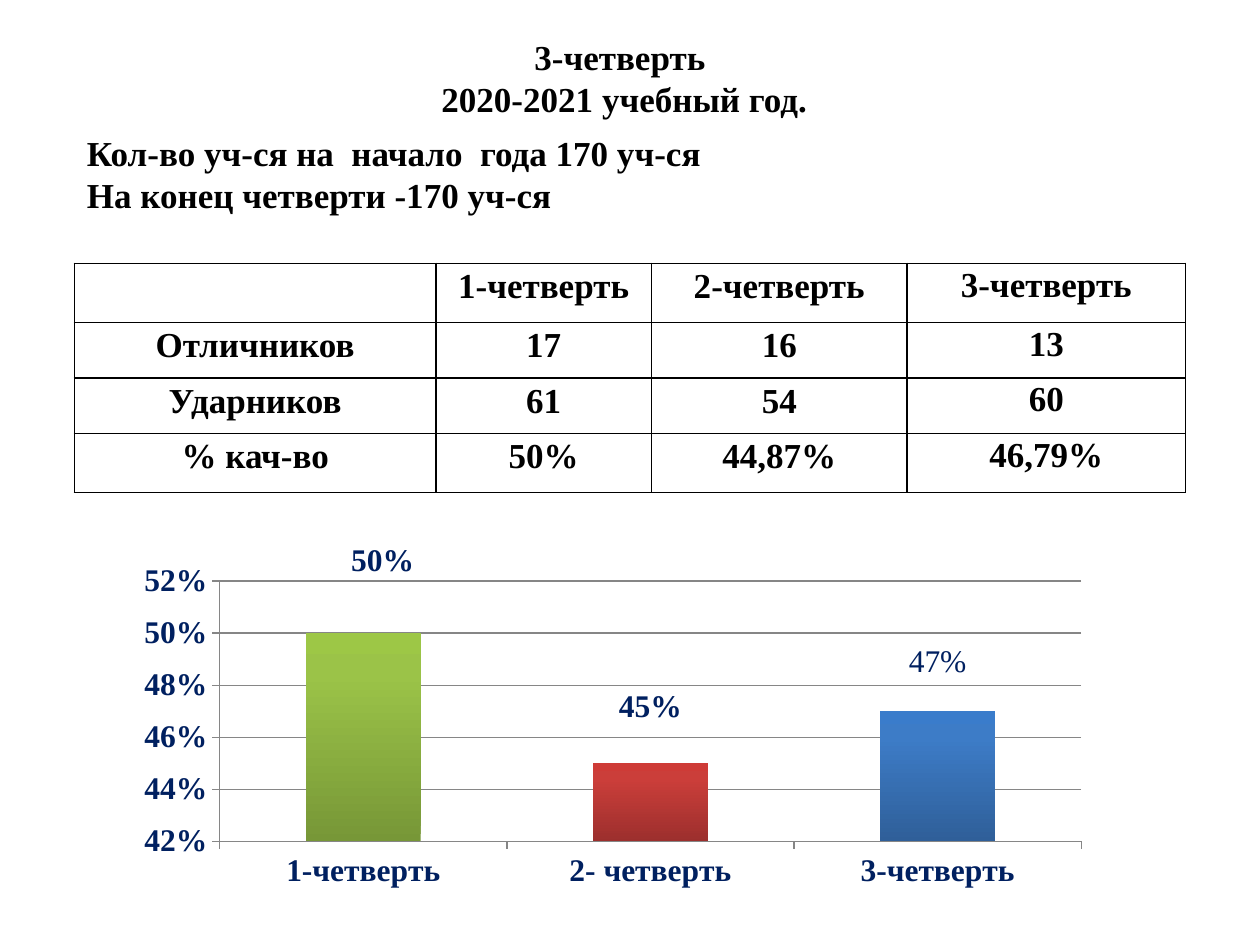
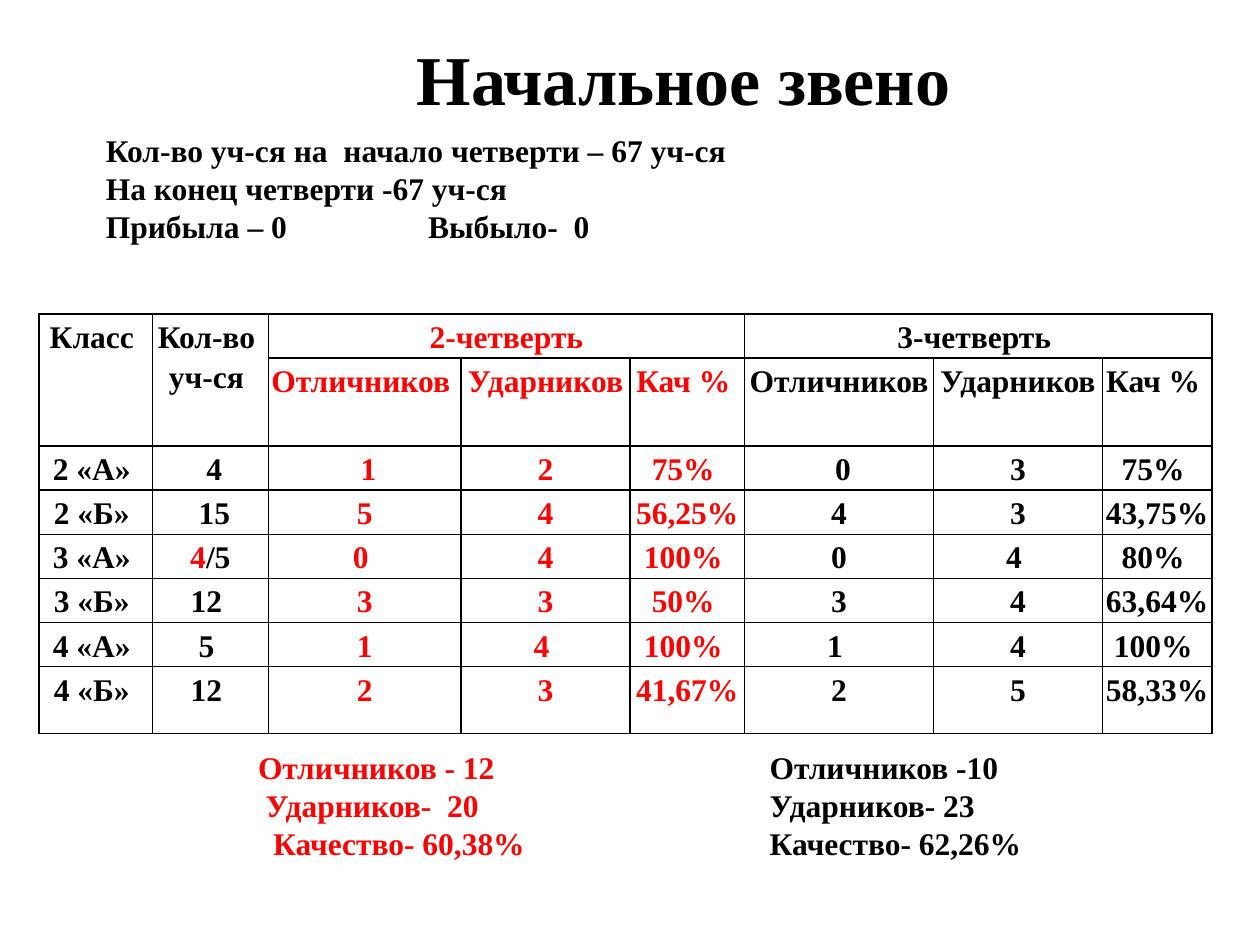
import copy
from dataclasses import dataclass
from typing import NamedTuple

import pptx
import pptx.chart.data
import pptx.dml.color
import pptx.enum.chart
import pptx.enum.text
import pptx.oxml
import pptx.oxml.ns
import pptx.util

Inches = pptx.util.Inches
Pt = pptx.util.Pt
qn = pptx.oxml.ns.qn
Align = pptx.enum.text.PP_ALIGN

FONT = "Times New Roman"
COLORS = {
    "ink": "000000",
    "previous": "FF0000",
    "chart_text": "002060",
    "axis": "868686",
}
NO_LEADER_LINES = (
    '<c:extLst xmlns:c="http://schemas.openxmlformats.org/drawingml/2006/chart">'
    '<c:ext uri="{CE6537A1-D6FC-4f65-9D91-7224C49458BB}"'
    ' xmlns:c15="http://schemas.microsoft.com/office/drawing/2012/chart">'
    '<c15:showLeaderLines val="0"/></c:ext></c:extLst>'
)


class Span(NamedTuple):
    text: str
    color: str = "ink"


class Box(NamedTuple):
    left: float
    top: float
    width: float
    height: float


class QuarterBar(NamedTuple):
    quarter: str
    share: float
    gradient: tuple[str, str, str]
    label_shift: tuple[float, float]


@dataclass
class TextBlock:
    box: Box
    size: int
    lines: list[list[Span]]
    align: Align = Align.LEFT
    indent_step: float = 0


@dataclass
class Grid:
    left: float
    top: float
    columns: list[float]
    rows: list[float]
    size: int
    line_spacing: float
    space_after: int
    side_margin: float


BARS = [
    QuarterBar("1-четверть", 0.50, ("779737", "9BC348", "9DC746"), (0.02, -0.13)),
    QuarterBar("2- четверть", 0.45, ("9C2F2D", "CB3E3A", "CE3B37"), (0, -0.09)),
    QuarterBar("3-четверть", 0.47, ("2F5F99", "3D7CC7", "3A7CCB"), (0, -0.07)),
]

QUARTER_ROWS = [
    ["", "1-четверть", "2-четверть", "3-четверть"],
    ["Отличников", "17", "16", "13"],
    ["Ударников", "61", "54", "60"],
    ["% кач-во", "50%", "44,87%", "46,79%"],
]

MEASURES = ["Отличников ", "Ударников", "Кач % "]
CLASS_ROWS = [
    ["Класс ", "Кол-во \nуч-ся ", "2-четверть", "", "", "3-четверть ", "", ""],
    ["", "", *MEASURES, *MEASURES],
    ["2 «А» ", " 4", " 1", "2", "75% ", " 0", "3", "75% "],
    ["2 «Б» ", " 15", "5", "4", "56,25% ", "4", "3", "43,75% "],
    ["3 «А» ", "4/5", "0 ", "4", "100% ", "0", "4 ", "80% "],
    ["3 «Б» ", "12 ", "3", "3", "50% ", "3", "4", "63,64% "],
    ["4 «А» ", "5 ", "1", "4 ", "100% ", "1 ", "4", "100% "],
    ["4 «Б» ", "12 ", "2", "3", "41,67% ", "2", "5", "58,33% "],
]
PREVIOUS_COLUMNS = range(2, 5)


def rgb(hex_color: str) -> pptx.dml.color.RGBColor:
    return pptx.dml.color.RGBColor.from_string(hex_color)


def style_font(font, size: int, color: str, bold: bool = True) -> None:
    font.name = FONT
    font.size = Pt(size)
    font.bold = bold
    font.color.rgb = rgb(COLORS[color])


def write_spans(paragraph, spans: list[Span], size: int, align: Align) -> None:
    paragraph.alignment = align
    paragraph.space_before = Pt(0)
    for span in spans:
        run = paragraph.add_run()
        run.text = span.text
        style_font(run.font, size, span.color)


def fill_text(shape, block: TextBlock) -> None:
    shape.left, shape.top, shape.width, shape.height = map(Inches, block.box)
    frame = shape.text_frame
    frame.word_wrap = True
    frame.auto_size = pptx.enum.text.MSO_AUTO_SIZE.NONE
    frame.vertical_anchor = pptx.enum.text.MSO_ANCHOR.TOP
    for index, spans in enumerate(block.lines):
        paragraph = frame.add_paragraph() if index else frame.paragraphs[0]
        write_spans(paragraph, spans, block.size, block.align)
        properties = paragraph._p.get_or_add_pPr()
        properties.set("marL", str(int(Inches(index * block.indent_step))))
        properties.set("indent", "0")
        properties.append(properties.makeelement(qn("a:buNone"), {}))


def add_text(slide, block: TextBlock) -> None:
    fill_text(slide.shapes.add_textbox(0, 0, 0, 0), block)


def add_report_slide(deck, title: TextBlock, counts: TextBlock):
    slide = deck.slides.add_slide(deck.slide_layouts[1])
    fill_text(slide.shapes.title, title)
    fill_text(slide.placeholders[1], counts)
    return slide


def outline_cell(cell) -> None:
    properties = cell._tc.get_or_add_tcPr()
    for position, side in enumerate(("a:lnL", "a:lnR", "a:lnT", "a:lnB")):
        line = properties.makeelement(qn(side), {"w": str(int(Pt(1)))})
        fill = line.makeelement(qn("a:solidFill"), {})
        fill.append(fill.makeelement(qn("a:srgbClr"), {"val": COLORS["ink"]}))
        line.append(fill)
        properties.insert(position, line)


def add_grid(slide, grid: Grid):
    table = slide.shapes.add_table(
        len(grid.rows), len(grid.columns), Inches(grid.left), Inches(grid.top),
        Inches(sum(grid.columns)), Inches(sum(grid.rows))).table
    table.first_row = table.horz_banding = False
    for column, width in zip(table.columns, grid.columns):
        column.width = Inches(width)
    for row, height in zip(table.rows, grid.rows):
        row.height = Inches(height)
    for cell in table.iter_cells():
        cell.margin_left = cell.margin_right = Inches(grid.side_margin)
        cell.margin_top, cell.margin_bottom = Inches(0.01), 0
        cell.fill.background()
        outline_cell(cell)
    return table


def fill_cell(cell, lines: list[list[Span]], grid: Grid) -> None:
    for index, spans in enumerate(lines):
        paragraph = cell.text_frame.add_paragraph() if index else cell.text_frame.paragraphs[0]
        write_spans(paragraph, spans, grid.size, Align.CENTER)
        paragraph.line_spacing = grid.line_spacing
        paragraph.space_after = Pt(grid.space_after)


def manual_layout(parent, settings: dict[str, str]):
    layout = parent.makeelement(qn("c:layout"), {})
    manual = layout.makeelement(qn("c:manualLayout"), {})
    for name, value in settings.items():
        manual.append(manual.makeelement(qn(f"c:{name}"), {"val": value}))
    layout.append(manual)
    return layout


def paint_bar(point, gradient: tuple[str, str, str]) -> None:
    fill = point.format.fill
    fill.gradient()
    fill.gradient_angle = 90
    first_stop = fill.gradient_stops[0]._gs
    first_stop.addnext(copy.deepcopy(first_stop))
    for stop, position, color in zip(fill.gradient_stops, (0, 0.8, 1), gradient):
        stop.position = position
        stop.color.rgb = rgb(color)


def style_axis(axis) -> None:
    style_font(axis.tick_labels.font, 18, "chart_text")
    axis.format.line.color.rgb = rgb(COLORS["axis"])
    axis.major_tick_mark = pptx.enum.chart.XL_TICK_MARK.OUTSIDE


def label_bars(series) -> None:
    labels = series.data_labels
    labels.show_value = True
    labels.number_format = "0%"
    labels.number_format_is_linked = False
    style_font(labels.font, 18, "chart_text")
    for index, bar in enumerate(BARS):
        point = series.points[index]
        paint_bar(point, bar.gradient)
        if index < len(BARS) - 1:
            style_font(point.data_label.font, 18, "chart_text")
        else:
            caption = point.data_label.text_frame
            caption.text = f"{bar.share:.0%}"
            style_font(caption.paragraphs[0].runs[0].font, 18, "chart_text", bold=False)
    for label, bar in zip(series._element.iter(qn("c:dLbl")), BARS):
        shift_x, shift_y = bar.label_shift
        label.insert(1, manual_layout(label, {"x": str(shift_x), "y": str(shift_y)}))
    for leader_lines in series._element.iter(qn("c:showLeaderLines")):
        leader_lines.set("val", "0")
    series._element.find(qn("c:dLbls")).append(pptx.oxml.parse_xml(NO_LEADER_LINES))


def add_quality_chart(slide, box: Box) -> None:
    quality = pptx.chart.data.CategoryChartData(number_format="0%")
    quality.categories = [bar.quarter for bar in BARS]
    quality.add_series("Series 1", [bar.share for bar in BARS])
    chart = slide.shapes.add_chart(
        pptx.enum.chart.XL_CHART_TYPE.COLUMN_CLUSTERED, *map(Inches, box), quality).chart
    chart.has_legend = chart.has_title = False
    chart.font.name = "Calibri"
    chart.font.size = Pt(18)

    style_axis(chart.category_axis)
    shares = chart.value_axis
    style_axis(shares)
    shares.minimum_scale, shares.maximum_scale, shares.major_unit = 0.42, 0.52, 0.02
    shares.major_gridlines.format.line.color.rgb = rgb(COLORS["axis"])
    shares.tick_labels.number_format = "0%"
    shares.tick_labels.number_format_is_linked = False

    plot = chart.plots[0]
    plot.gap_width = 150
    plot.vary_by_categories = False
    label_bars(plot.series[0])

    plot_area = plot._element.getparent()
    for existing in plot_area.findall(qn("c:layout")):
        plot_area.remove(existing)
    plot_area.insert(0, manual_layout(plot_area, {
        "layoutTarget": "inner", "xMode": "edge", "yMode": "edge",
        "x": "0.1", "y": "0.155", "w": "0.895", "h": "0.68"}))


def build_quarter_slide(deck) -> None:
    slide = add_report_slide(
        deck,
        TextBlock(Box(0.98, 0.23, 7.95, 1.08), 20,
                  [[Span("3-четверть ")], [Span("2020-2021 учебный год.")]], Align.CENTER),
        TextBlock(Box(0.59, 0.99, 8.94, 1.09), 20,
                  [[Span("Кол-во уч-ся на  начало  года 170 уч-ся")],
                   [Span("На конец четверти -170 уч-ся")]]))
    add_quality_chart(slide, Box(0.98, 4.14, 7.64, 3.04))
    grid = Grid(0.59, 2.09, [2.87, 1.71, 2.03, 2.21], [0.47, 0.44, 0.44, 0.47],
                20, 1.07, 8, 0.07)
    table = add_grid(slide, grid)
    for r, row in enumerate(QUARTER_ROWS):
        for c, text in enumerate(row):
            if text:
                fill_cell(table.cell(r, c), [[Span(text)]], grid)
        table.cell(r, 3).margin_top = 0


def build_primary_slide(deck) -> None:
    slide = add_report_slide(
        deck,
        TextBlock(Box(1.56, 0.23, 7.73, 0.77), 40, [[Span("Начальное звено")]], Align.CENTER),
        TextBlock(Box(0.74, 0.99, 8.67, 1.31), 18,
                  [[Span("Кол-во уч-ся на  начало четверти – 67 уч-ся")],
                   [Span("На конец четверти -67 уч-ся")],
                   [Span("Прибыла – 0")]]))
    add_text(slide, TextBlock(Box(3.3, 1.59, 2, 0.4), 18, [[Span("Выбыло-  0")]]))
    previous_totals = ["Отличников - 12", "Ударников-  20", "Качество- 60,38%"]
    current_totals = ["Отличников -10", "Ударников- 23", "Качество- 62,26%"]
    add_text(slide, TextBlock(Box(1.95, 5.89, 3.5, 1.31), 18,
                              [[Span(total, "previous")] for total in previous_totals],
                              indent_step=0.06))
    add_text(slide, TextBlock(Box(6.01, 5.89, 3.62, 1.31), 18,
                              [[Span(total)] for total in current_totals]))

    grid = Grid(0.31, 2.49, [0.9, 0.92, 1.53, 1.34, 0.91, 1.5, 1.34, 0.87],
                [0.35, 0.7, *[0.35] * 5, 0.53], 18, 1.15, 0, 0.02)
    table = add_grid(slide, grid)
    for top, left, bottom, right in ((0, 0, 1, 0), (0, 1, 1, 1), (0, 2, 0, 4), (0, 5, 0, 7)):
        table.cell(top, left).merge(table.cell(bottom, right))
    for r, row in enumerate(CLASS_ROWS):
        for c, text in enumerate(row):
            color = "previous" if c in PREVIOUS_COLUMNS else "ink"
            lines = [[Span(line, color)] for line in text.split("\n")]
            if text == "4/5":
                lines = [[Span("4", "previous"), Span("/5")]]
            if text:
                fill_cell(table.cell(r, c), lines, grid)


def main() -> None:
    deck = pptx.Presentation()
    deck.slide_width, deck.slide_height = Inches(10), Inches(7.5)
    build_quarter_slide(deck)
    build_primary_slide(deck)
    deck.save("out.pptx")


if __name__ == "__main__":
    main()
